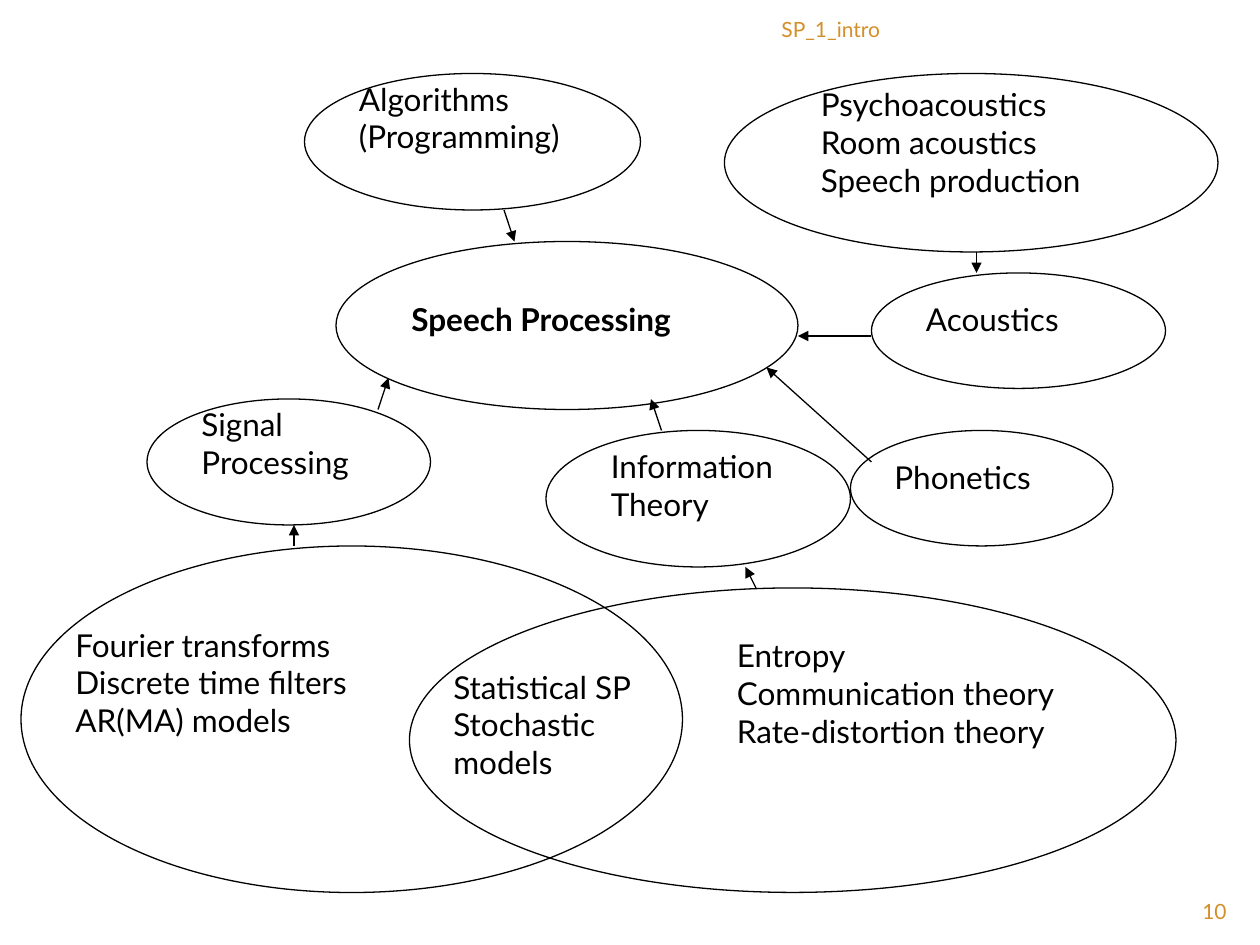
import pptx
import pptx.util
import pptx.dml.color
import pptx.enum.shapes
import pptx.enum.text
import pptx.oxml.ns
import lxml.etree

Inches = pptx.util.Inches
FONT = "Lato"
COLORS = {"ink": "000000", "accent": "D48F29"}
GRID_PER_INCH = 12

ELLIPSES = [
    (32, 23, 44, 16),
    (14, 38, 27, 12),
    (52, 41, 29, 13),
    (81, 41, 25, 11),
    (83, 26, 28, 11),
    (29, 7, 32, 13),
    (2, 52, 63, 33),
    (39, 56, 73, 29),
    (69, 7, 47, 17),
]
LABELS = [
    (["Speech Processing"], (38, 28, 34), True),
    (["Signal", "Processing"], (18, 38, 28), False),
    (["Information", "Theory"], (57, 42, 28), False),
    (["Phonetics"], (84, 43, 22), False),
    (["Acoustics"], (87, 28, 28), False),
    (["Algorithms", "(Programming)"], (33, 7, 28), False),
    (["Fourier transforms", "Discrete time filters", "AR(MA) models"],
     (6, 59, 35), False),
    (["Entropy", "Communication theory", "Rate-distortion theory"],
     (69, 60, 41), False),
    (["Statistical SP", "Stochastic", "models"], (42, 63, 42), False),
    (["Psychoacoustics", "Room acoustics", "Speech production"],
     (77, 7.5, 37), False),
]
ARROWS = [
    ((28, 52), (28, 50)),
    ((36, 39), (37, 36)),
    ((72, 56), (71, 54)),
    ((63, 41), (62, 38)),
    ((83, 44), (73, 35)),
    ((83, 32), (76, 32)),
    ((48, 20), (49, 23)),
    ((93, 24), (93, 26)),
]
MARGINALS = [
    ("10", (108, 85, 10), 0.27),
    ("SP_1_intro", (41, 1, 44), 0.32),
]


def on_grid(values):
    return [Inches(value / GRID_PER_INCH) for value in values]


def rgb(name):
    return pptx.dml.color.RGBColor.from_string(COLORS[name])


def style_line(line):
    line.color.rgb = rgb("ink")
    line.width = pptx.util.Pt(0.75)


def add_ellipse(slide, box):
    shape = slide.shapes.add_shape(
        pptx.enum.shapes.MSO_SHAPE.OVAL, *on_grid(box))
    shape.shadow.inherit = False
    shape.fill.background()
    style_line(shape.line)


def add_text(slide, lines, place, height,
             size=18, color="ink", bold=False, align="LEFT"):
    frame = slide.shapes.add_textbox(*on_grid(place), Inches(height)).text_frame
    frame.word_wrap = True
    paragraph = frame.paragraphs[0]
    paragraph.alignment = getattr(pptx.enum.text.PP_ALIGN, align)
    for index, text in enumerate(lines):
        if index:
            paragraph.add_line_break()
        run = paragraph.add_run()
        run.text = text
        run.font.name = FONT
        run.font.size = pptx.util.Pt(size)
        run.font.bold = bold
        run.font.color.rgb = rgb(color)


def add_arrow(slide, start, end):
    connector = slide.shapes.add_connector(
        pptx.enum.shapes.MSO_CONNECTOR.STRAIGHT, *on_grid(start + end))
    style_line(connector.line)
    qn = pptx.oxml.ns.qn
    properties = connector.element.find(qn("p:spPr"))
    lxml.etree.SubElement(
        properties.find(qn("a:ln")), qn("a:tailEnd"), type="triangle")
    lxml.etree.SubElement(properties, qn("a:effectLst"))


def main():
    presentation = pptx.Presentation()
    presentation.slide_width = Inches(10)
    presentation.slide_height = Inches(7.5)
    slide = presentation.slides.add_slide(presentation.slide_layouts[6])
    for box in ELLIPSES:
        add_ellipse(slide, box)
    for lines, place, bold in LABELS:
        add_text(slide, lines, place, 0.1 + 0.4 * len(lines), bold=bold)
    for start, end in ARROWS:
        add_arrow(slide, start, end)
    for text, place, height in MARGINALS:
        add_text(slide, [text], place, height,
                 size=12, color="accent", align="RIGHT")
    presentation.save("out.pptx")


if __name__ == "__main__":
    main()
